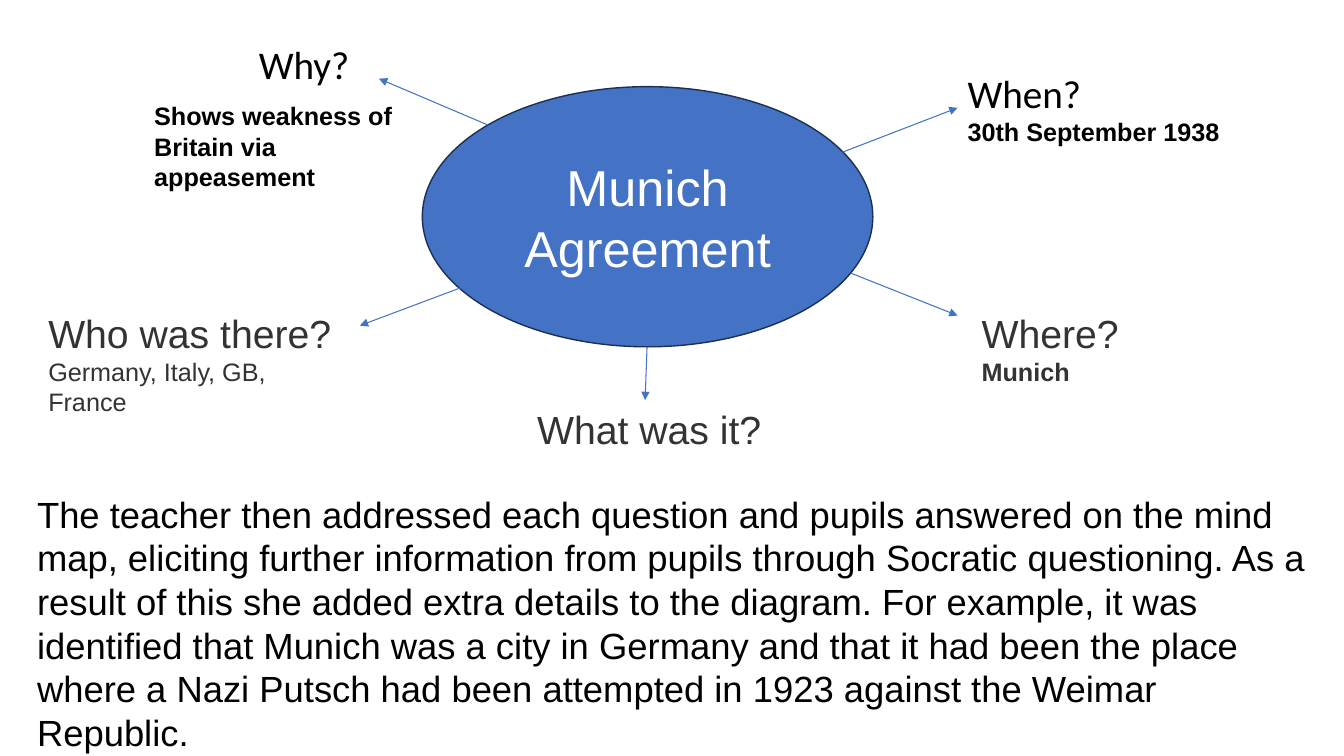
from lxml import etree
from pptx import Presentation
from pptx.dml.color import RGBColor
from pptx.enum.shapes import MSO_CONNECTOR, MSO_SHAPE
from pptx.enum.text import MSO_ANCHOR, PP_ALIGN
from pptx.oxml.ns import qn
from pptx.util import Pt

STRAIGHT = MSO_CONNECTOR.STRAIGHT
ELLIPSE = MSO_SHAPE.OVAL
MIDDLE = MSO_ANCHOR.MIDDLE
CENTER = PP_ALIGN.CENTER

BLUE, NAVY, WHITE = "4472C4", "1C3052", "FFFFFF"
BLACK, GREY = "000000", "333333"

TOPIC = {"size": Pt(36), "name": "Arial"}
QUESTION = {"size": Pt(28), "name": "Arial"}
QUESTION_CALIBRI = {"size": Pt(28), "name": "Calibri"}
ANSWER = {"size": Pt(18), "name": "Arial"}
ANSWER_BOLD = {"size": Pt(18), "name": "Arial", "bold": True}
NARRATIVE = {"size": Pt(26), "name": "Arial"}

ARROWS = [
    ((348.5, 89.3), (270.7, 56.2)),
    ((601.9, 108.7), (684, 77)),
    ((607.7, 195.1), (684, 225.4)),
    ((462.2, 247.7), (460.8, 285.8)),
    ((331.9, 204.5), (257, 232.6)),
]

NOTES = [
    ((177.8, 25.2, 92.2, 41), BLACK, [("Why?", QUESTION_CALIBRI)]),
    ((103, 68.4, 205.2, 72.7), BLACK,
     [("Shows weakness of Britain via appeasement", ANSWER_BOLD)]),
    ((684, 46.1, 215.3, 63.4), BLACK,
     [("When?", QUESTION_CALIBRI), ("30th September 1938", ANSWER_BOLD)]),
    ((694.1, 217.4, 171.4, 63.4), GREY,
     [("Where?", QUESTION), ("Munich", ANSWER_BOLD)]),
    ((376.6, 285.8, 211, 41), GREY, [("What was it?", QUESTION)]),
    ((27.4, 217.4, 221, 85), GREY,
     [("Who was there?", QUESTION), ("Germany, Italy, GB, France", ANSWER)]),
    ((19.4, 347.8, 924.5, 218.2), BLACK,
     [("The teacher then addressed each question and pupils answered on the "
       "mind map, eliciting further information from pupils through Socratic "
       "questioning. As a result of this she added extra details to the "
       "diagram. For example, it was identified that Munich was a city in "
       "Germany and that it had been the place where a Nazi Putsch had been "
       "attempted in 1923 against the Weimar Republic.", NARRATIVE)]),
]


def rgb(value):
    """Turn a hex string into a colour."""
    return RGBColor.from_string(value)


def write(tf, lines, color):
    """Write each (text, format) pair as one paragraph."""
    tf.word_wrap = True
    for i, (text, formats) in enumerate(lines):
        p = tf.add_paragraph() if i else tf.paragraphs[0]
        r = p.add_run()
        r.text = text
        r.font.color.rgb = rgb(color)
        for name, value in formats.items():
            setattr(r.font, name, value)


def add_topic(s, box, text):
    """Add the central ellipse of the mind map."""
    sp = s.shapes.add_shape(ELLIPSE, *map(Pt, box))
    sp.shadow.inherit = False
    sp.fill.solid()
    sp.fill.fore_color.rgb = rgb(BLUE)
    sp.line.color.rgb = rgb(NAVY)
    sp.line.width = Pt(1)
    tf = sp.text_frame
    tf.vertical_anchor = MIDDLE
    write(tf, [(text, TOPIC)], WHITE)
    tf.paragraphs[0].alignment = CENTER


def add_arrow(s, start, end):
    """Add a thin arrow pointing at its end."""
    sp = s.shapes.add_connector(STRAIGHT, *map(Pt, start + end))
    sp.line.color.rgb = rgb(BLUE)
    sp.line.width = Pt(0.75)
    etree.SubElement(sp.line._get_or_add_ln(), qn("a:tailEnd"), type="triangle")
    etree.SubElement(sp._element.spPr, qn("a:effectLst"))


def add_note(s, box, color, lines):
    """Add a wrapped text box."""
    sp = s.shapes.add_textbox(*map(Pt, box))
    write(sp.text_frame, lines, color)


def main():
    """Build the mind map slide."""
    prs = Presentation()
    prs.slide_width, prs.slide_height = Pt(960), Pt(540)
    s = prs.slides.add_slide(prs.slide_layouts[6])
    add_topic(s, (301.7, 61.9, 321.8, 185.8), "Munich Agreement")
    for start, end in ARROWS:
        add_arrow(s, start, end)
    for box, color, lines in NOTES:
        add_note(s, box, color, lines)
    prs.save("out.pptx")


if __name__ == "__main__":
    main()
